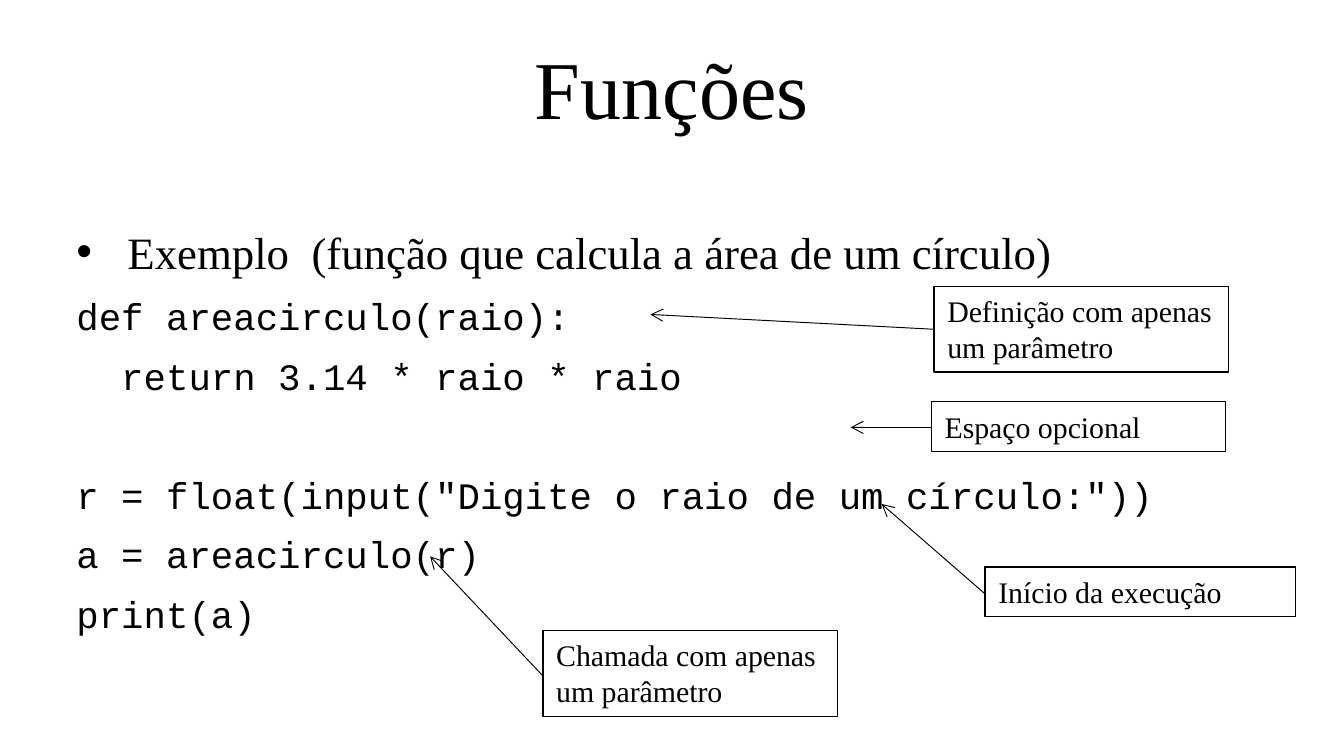
"""Builds a slide on Python functions, with code and callouts."""
from typing import NamedTuple

from lxml.etree import SubElement
from pptx import Presentation
from pptx.dml.color import RGBColor
from pptx.enum.shapes import MSO_CONNECTOR as Conn, MSO_SHAPE as Shape
from pptx.enum.text import MSO_ANCHOR as Anchor, MSO_AUTO_SIZE as Fit, PP_ALIGN as Align
from pptx.oxml.ns import qn
from pptx.util import Inches, Pt

BLACK = RGBColor(0, 0, 0)
SERIF, MONO = "Times New Roman", "Courier New"
COLS, ROWS, CELLS_PER_INCH = 100, 56.25, 10


class Line(NamedTuple):
    text: str
    before: float = 8


class Callout(NamedTuple):
    text: str
    col: float
    row: float
    rows: float
    start_row: float
    tip: tuple[float, float]
    cols: float = 21.9


CODE = [
    Line("def areacirculo(raio):"),
    Line("  return 3.14 * raio * raio"),
    Line('r = float(input("Digite o raio de um círculo:"))', 39.8),
    Line("a = areacirculo(r)"),
    Line("print(a)"),
]
CALLOUTS = [
    Callout("Definição com apenas um parâmetro", 69.5, 21.3, 6.4, 24.5, (48.4, 23.4)),
    Callout("Chamada com apenas um parâmetro", 40.4, 46.9, 6.4, 50.3, (32, 41.4)),
    Callout("Espaço opcional", 69.3, 29.9, 3.7, 31.8, (63.3, 31.8)),
    Callout("Início da execução", 73.3, 42.2, 3.7, 44.2, (65.6, 37.5), 23.1),
]


def grid(*cells: float) -> list[Inches]:
    return [Inches(c / CELLS_PER_INCH) for c in cells]


def write(p, text: str, *, size: float, font: str = SERIF, before: float = 0,
          align: Align = Align.LEFT, bullet: bool = False) -> None:
    if bullet:
        pPr = p._p.get_or_add_pPr()
        pPr.set("marL", str(Inches(0.38)))
        pPr.set("indent", str(-Inches(0.38)))
        SubElement(pPr, qn("a:buFont"), typeface="Arial")
        SubElement(pPr, qn("a:buChar"), char="•")
    p.alignment = align
    p.space_before = Pt(before)
    r = p.add_run()
    r.text = text
    r.font.size, r.font.name = Pt(size), font
    r.font.color.rgb = BLACK


def add_text(s, *cells: float):
    tf = s.shapes.add_textbox(*grid(*cells)).text_frame
    tf.word_wrap, tf.vertical_anchor = True, Anchor.TOP
    return tf


def add_callout(s, c: Callout) -> None:
    shapes = s.shapes.add_group_shape().shapes
    sp = shapes.add_shape(Shape.RECTANGLE, *grid(c.col, c.row, c.cols, c.rows))
    sp.shadow.inherit = False
    sp.fill.background()
    sp.line.color.rgb, sp.line.width = BLACK, Pt(0.75)
    tf = sp.text_frame
    tf.word_wrap, tf.auto_size = True, Fit.SHAPE_TO_FIT_TEXT
    tf.vertical_anchor = Anchor.TOP
    write(tf.paragraphs[0], c.text, size=16)

    arrow = shapes.add_connector(Conn.STRAIGHT, *grid(c.col, c.start_row, *c.tip))
    arrow.line.color.rgb, arrow.line.width = BLACK, Pt(0.5)
    SubElement(arrow.line._get_or_add_ln(), qn("a:tailEnd"), type="arrow")
    SubElement(arrow._element.spPr, qn("a:effectLst"))


def main() -> None:
    prs = Presentation()
    prs.slide_width, prs.slide_height = grid(COLS, ROWS)
    s = prs.slides.add_slide(prs.slide_layouts[6])
    title = add_text(s, 5, 2.3, COLS - 10, 9.4)
    write(title.paragraphs[0], "Funções", size=44, align=Align.CENTER)
    body = add_text(s, 4.7, 16.2, 92.2, 33.8)
    write(body.paragraphs[0], "Exemplo  (função que calcula a área de um círculo)",
          size=24, bullet=True)
    for line in CODE:
        write(body.add_paragraph(), line.text, size=20, font=MONO, before=line.before)
    for c in CALLOUTS:
        add_callout(s, c)
    prs.save("out.pptx")


if __name__ == "__main__":
    main()
